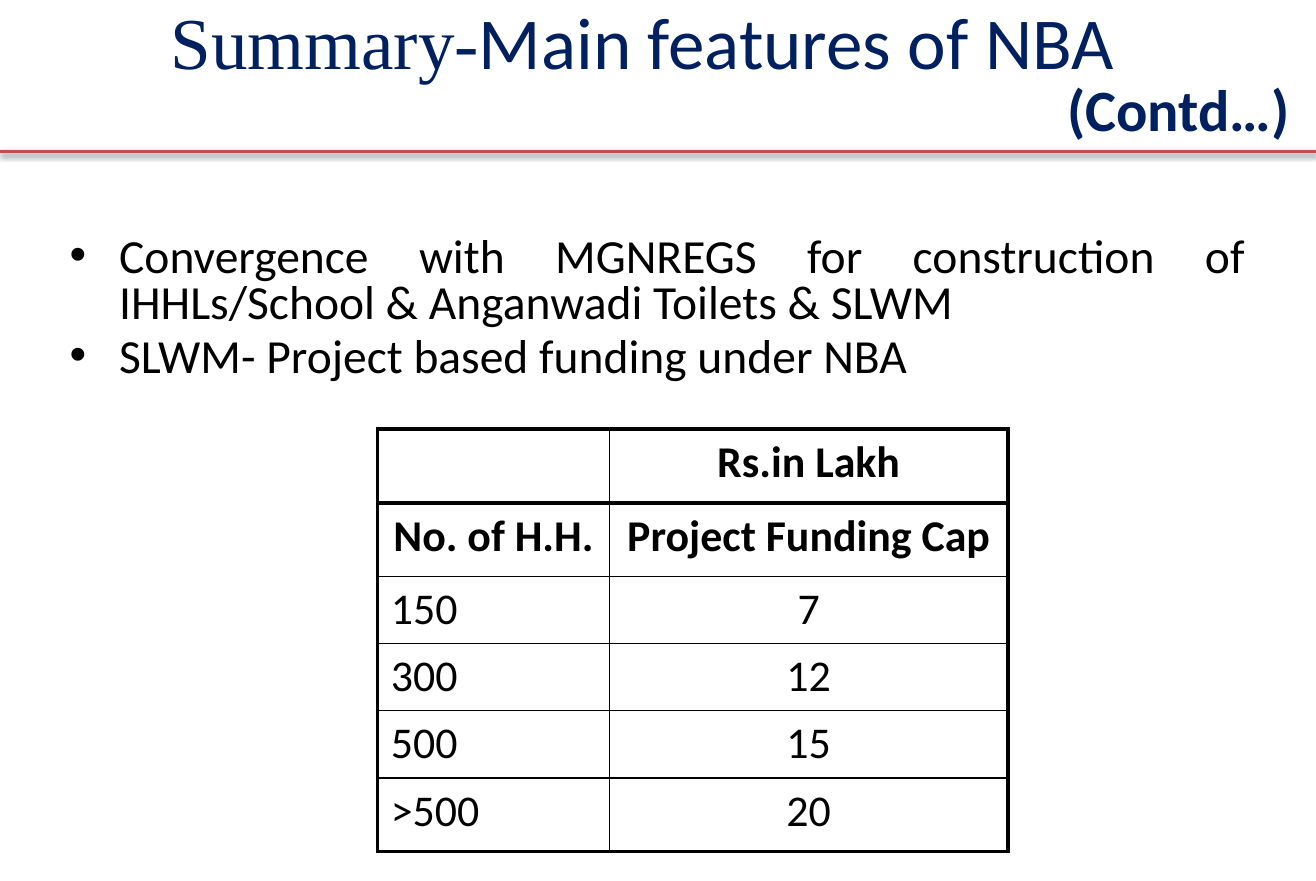
from dataclasses import dataclass

from lxml import etree
from pptx import Presentation
from pptx.dml.color import RGBColor
from pptx.enum import shapes, text
from pptx.oxml import ns
from pptx.util import Cm, Inches, Pt

NAVY = RGBColor(0x00, 0x20, 0x60)
RED = RGBColor(0xC0, 0x50, 0x4D)
BLACK = RGBColor(0, 0, 0)
LEFT, CENTER = text.PP_ALIGN.LEFT, text.PP_ALIGN.CENTER
RIGHT, JUSTIFY = text.PP_ALIGN.RIGHT, text.PP_ALIGN.JUSTIFY
THICK, THIN = Pt(2.25), Pt(1)


@dataclass(frozen=True)
class Span:
    words: str
    size: float
    color: RGBColor = BLACK
    font: str = "Calibri"
    bold: bool = False


@dataclass(frozen=True)
class Line:
    spans: tuple[Span, ...]
    format: dict


TITLE = (
    Line((Span("Summary-", 40, NAVY, "Times New Roman"),
          Span("Main features of NBA", 40, NAVY)),
         {"alignment": CENTER, "line_spacing": 0.7}),
    Line((Span("(Contd…)", 32, NAVY, bold=True),),
         {"alignment": RIGHT, "line_spacing": 0.88}),
)
BULLET_FORMAT = {"alignment": JUSTIFY, "line_spacing": 0.8,
                 "space_before": Pt(0), "space_after": Pt(5)}
BULLETS = tuple(Line((Span(words, 26),), BULLET_FORMAT) for words in (
    "Convergence with MGNREGS for construction of "
    "IHHLs/School & Anganwadi Toilets & SLWM",
    "SLWM- Project based funding under NBA",
))
FUNDING = (
    ("", "Rs.in Lakh"),
    ("No. of H.H.", "Project Funding Cap"),
    ("150", "7"),
    ("300", "12"),
    ("500", "15"),
    (">500", "20"),
)
HEADER_ROWS = 2
COLUMN_WIDTHS = (1.76, 3.03)
ROW_HEIGHTS = (0.56, 0.56, 0.51, 0.51, 0.51, 0.56)


def set_attributes(target, values: dict) -> None:
    for name, value in values.items():
        setattr(target, name, value)


def write_lines(frame, lines: tuple[Line, ...]) -> None:
    for index, line in enumerate(lines):
        para = frame.paragraphs[0] if index == 0 else frame.add_paragraph()
        set_attributes(para, line.format)
        for span in line.spans:
            run = para.add_run()
            run.text = span.words
            set_attributes(run.font, {"name": span.font, "size": Pt(span.size),
                                      "bold": span.bold})
            run.font.color.rgb = span.color


def fill_placeholder(box, place: tuple, margins: dict, lines: tuple[Line, ...]) -> None:
    sides = ("left", "top", "width", "height")
    set_attributes(box, dict(zip(sides, map(Inches, place))))
    frame = box.text_frame
    set_attributes(frame, {"word_wrap": True, "auto_size": text.MSO_AUTO_SIZE.NONE})
    set_attributes(frame, margins)
    write_lines(frame, lines)


def add_rule(page) -> None:
    """Draw the shadowed line under the title."""
    y = Inches(1.15)
    rule = page.shapes.add_connector(shapes.MSO_CONNECTOR.STRAIGHT,
                                     0, y, Inches(10), y)
    rule.line.color.rgb = RED
    rule.line.width = Pt(2)
    effects = etree.SubElement(rule._element.spPr, ns.qn("a:effectLst"))
    shadow = etree.SubElement(effects, ns.qn("a:outerShdw"), {
        "blurRad": str(Pt(3.1)), "dist": str(Pt(1.6)),
        "dir": "5400000", "rotWithShape": "0"})
    color = etree.SubElement(shadow, ns.qn("a:srgbClr"), val=str(BLACK))
    etree.SubElement(color, ns.qn("a:alpha"), val="38000")


def set_borders(cell, widths: dict[str, int]) -> None:
    """Set borders; widths must come in the order L, R, T, B."""
    properties = cell._tc.get_or_add_tcPr()
    for index, (side, width) in enumerate(widths.items()):
        border = etree.Element(ns.qn(f"a:ln{side}"), w=str(width))
        fill = etree.SubElement(border, ns.qn("a:solidFill"))
        etree.SubElement(fill, ns.qn("a:srgbClr"), val=str(BLACK))
        properties.insert(index, border)


def add_funding_table(page) -> None:
    last_row, last_column = len(FUNDING) - 1, len(COLUMN_WIDTHS) - 1
    table = page.shapes.add_table(
        len(FUNDING), len(COLUMN_WIDTHS), Inches(2.87), Inches(3.26),
        Inches(sum(COLUMN_WIDTHS)), Inches(sum(ROW_HEIGHTS))).table
    set_attributes(table, {"first_row": False, "horz_banding": False})
    for column, width in zip(table.columns, COLUMN_WIDTHS):
        column.width = Inches(width)
    for r, (row, height) in enumerate(zip(table.rows, ROW_HEIGHTS)):
        row.height = Inches(height)
        for c, cell in enumerate(row.cells):
            header = r < HEADER_ROWS
            cell.fill.background()
            set_borders(cell, {
                "L": THICK if c == 0 else THIN,
                "R": THICK if c == last_column else THIN,
                "T": THICK if r in (0, 1) else THIN,
                "B": THICK if r in (0, last_row) else THIN,
            })
            if FUNDING[r][c]:
                align = CENTER if header or c else LEFT
                span = Span(FUNDING[r][c], 24, bold=header)
                write_lines(cell.text_frame, (Line((span,), {"alignment": align}),))


def main() -> None:
    deck = Presentation()
    deck.slide_width, deck.slide_height = Inches(10), Cm(17)
    page = deck.slides.add_slide(deck.slide_layouts[1])
    fill_placeholder(page.shapes.title, (-0.04, 0.22, 9.99, 0.81),
                     {"margin_left": 0, "margin_right": Inches(0.15)}, TITLE)
    fill_placeholder(page.placeholders[1], (0.43, 1.59, 9.14, 1.67),
                     {"margin_top": Inches(0.21)}, BULLETS)
    add_rule(page)
    add_funding_table(page)
    deck.save("out.pptx")


if __name__ == "__main__":
    main()
